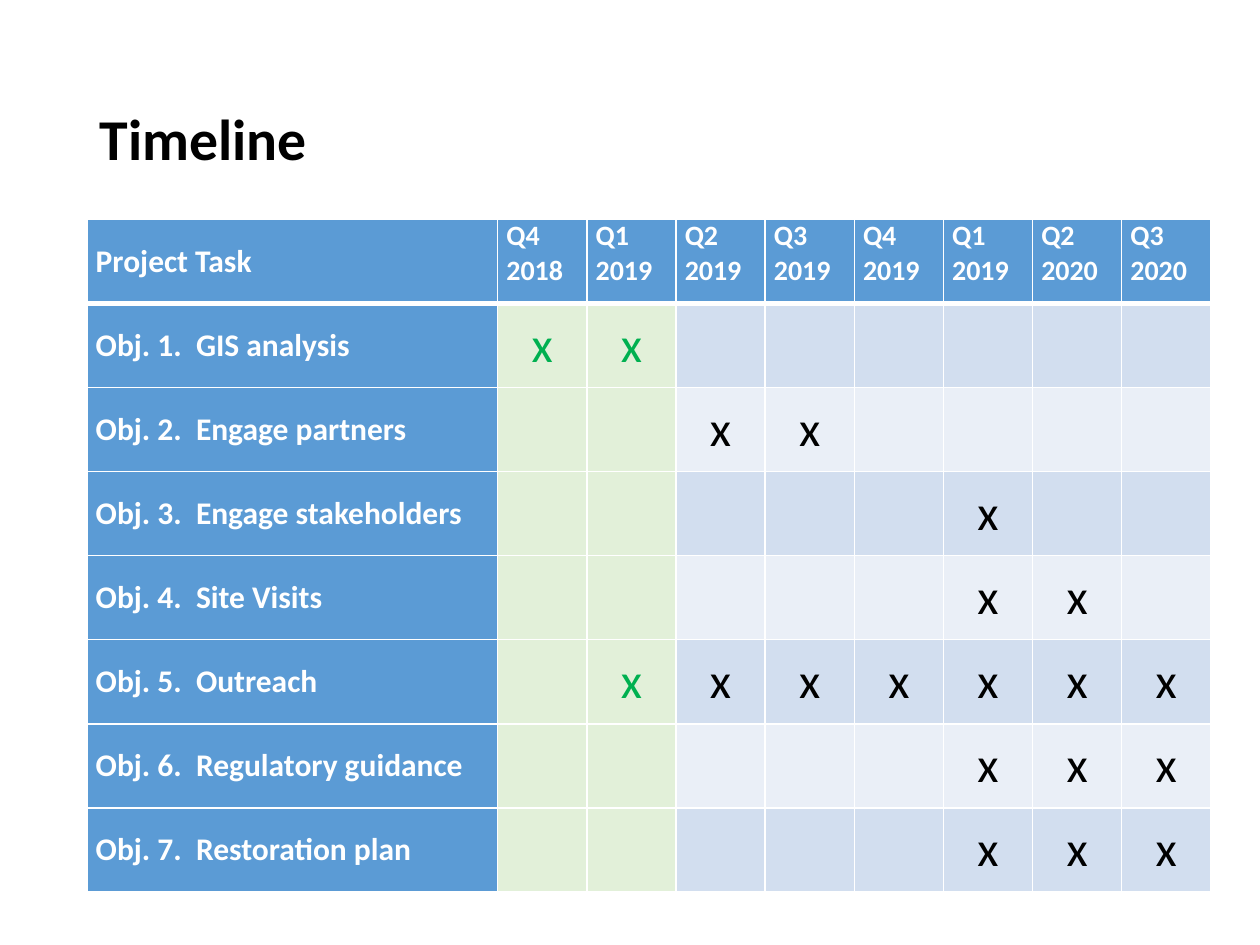
from dataclasses import dataclass

from lxml import etree
from pptx import Presentation
from pptx import util as u
from pptx.dml.color import RGBColor
from pptx.enum import text
from pptx.oxml import ns


@dataclass(frozen=True)
class Theme:
    """Colours, type sizes and font of the slide."""
    font: str = "Calibri"
    white: str = "FFFFFF"
    black: str = "000000"
    blue: str = "5B9BD5"
    bands: tuple = ("D2DEEF", "EAEFF7")
    done_fill: str = "E2F0D9"
    done_mark: str = "00B050"
    title: int = 33
    quarter: int = 16
    task: int = 18
    mark: int = 28


class TimelineSlide:
    """Holds the theme and the slide, and adds elements to it."""

    def __init__(self, prs, theme):
        """Start a slide that has only a title."""
        self.theme = theme
        self.slide = prs.slides.add_slide(prs.slide_layouts[5])

    def style(self, p, size, color, bold=True, align=text.PP_ALIGN.LEFT):
        """Format a paragraph and its runs."""
        p.alignment = align
        for r in p.runs:
            r.font.name = self.theme.font
            r.font.size = u.Pt(size)
            r.font.bold = bold
            r.font.color.rgb = RGBColor.from_string(color)

    def title(self, words, left, top, width, height):
        """Fill and place the title placeholder."""
        sp = self.slide.shapes.title
        sp.left, sp.top, sp.width, sp.height = map(u.Inches, (left, top, width, height))
        tf = sp.text_frame
        tf.text = words
        tf.vertical_anchor = text.MSO_ANCHOR.MIDDLE
        tf.paragraphs[0].line_spacing = 0.9
        self.style(tf.paragraphs[0], self.theme.title, self.theme.black)

    def borders(self, cell, **widths):
        """Draw white cell borders with widths in points by side."""
        tc_pr = cell._tc.get_or_add_tcPr()
        for side, width in widths.items():
            ln = etree.SubElement(tc_pr, ns.qn(f"a:ln{side}"), w=str(u.Pt(width)))
            fill = etree.SubElement(ln, ns.qn("a:solidFill"))
            etree.SubElement(fill, ns.qn("a:srgbClr"), val=self.theme.white)

    def cell(self, cell, fill, heavy=(), words="", anchor=text.MSO_ANCHOR.MIDDLE, **style):
        """Set the borders, fill and text of one cell."""
        self.borders(cell, **{side: 3 if side in heavy else 1 for side in "LRTB"})
        cell.fill.solid()
        cell.fill.fore_color.rgb = RGBColor.from_string(fill)
        cell.margin_left = cell.margin_right = u.Inches(0.07)
        cell.margin_top = cell.margin_bottom = 0
        cell.vertical_anchor = anchor
        if words:
            cell.text_frame.text = words
            for p in cell.text_frame.paragraphs:
                self.style(p, **style)

    def timeline(self, quarters, tasks, done, left, top, width, height, task_width):
        """Add the table of tasks by quarter, the first ones being done."""
        t = self.theme
        rows, cols = len(tasks) + 1, len(quarters) + 1
        table = self.slide.shapes.add_table(
            rows, cols, *map(u.Inches, (left, top, width, height))).table
        for c, column in enumerate(table.columns):
            column.width = u.Inches((width - task_width) / len(quarters) if c else task_width)
        for row in table.rows:
            row.height = u.Inches(height / rows)

        self.cell(table.cell(0, 0), t.blue, "B", "Project Task", size=t.task, color=t.white)
        for c, quarter in enumerate(quarters, 1):
            self.cell(table.cell(0, c), t.blue, "B", quarter, text.MSO_ANCHOR.TOP,
                      size=t.quarter, color=t.white)
        for r, (task, marked) in enumerate(tasks, 1):
            heavy = "T" if r == 1 else ""
            self.cell(table.cell(r, 0), t.blue, heavy, f"Obj. {r}.  {task}",
                      size=t.task, color=t.white)
            for c in range(1, cols):
                past = c <= done
                self.cell(table.cell(r, c), t.done_fill if past else t.bands[(r - 1) % 2],
                          heavy, "x" if c in marked else "", size=t.mark,
                          color=t.done_mark if past else t.black,
                          bold=False, align=text.PP_ALIGN.CENTER)


def main():
    """Build the timeline slide and save it."""
    prs = Presentation()
    prs.slide_width, prs.slide_height = u.Inches(10), u.Inches(7.5)
    s = TimelineSlide(prs, Theme())
    s.title("Timeline", 0.69, 0.4, 8.62, 1.45)
    quarters = ["Q4\n2018", "Q1 2019", "Q2\n2019", "Q3\n2019",
                "Q4\n2019", "Q1 2019", "Q2\n2020", "Q3\n2020"]
    tasks = [
        ("GIS analysis", (1, 2)),
        ("Engage partners", (3, 4)),
        ("Engage stakeholders", (6,)),
        ("Site Visits", (6, 7)),
        ("Outreach", range(2, 9)),
        ("Regulatory guidance", (6, 7, 8)),
        ("Restoration plan", (6, 7, 8)),
    ]
    s.timeline(quarters, tasks, 2, 0.69, 1.74, 8.92, 5.34, task_width=3.26)
    prs.save("out.pptx")


if __name__ == "__main__":
    main()
